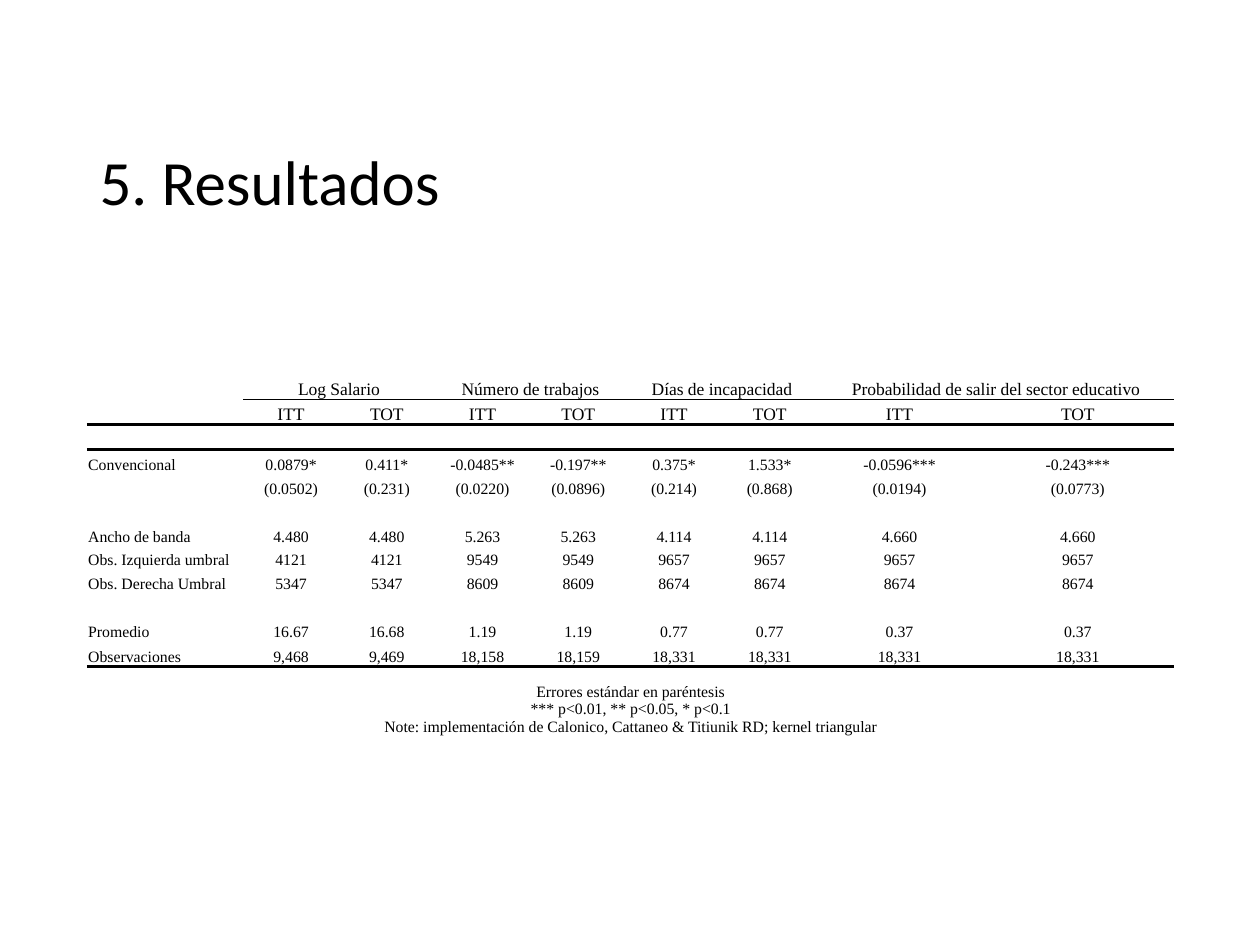
import lxml.etree
import pptx
import pptx.dml.color
import pptx.enum.text
import pptx.oxml.ns
import pptx.util

Inches = pptx.util.Inches
Pt = pptx.util.Pt
qn = pptx.oxml.ns.qn
PP_ALIGN = pptx.enum.text.PP_ALIGN
ANCHOR = pptx.enum.text.MSO_ANCHOR

BLACK = "000000"
NO_STYLE_NO_GRID = "{2D5ABB26-0587-4C30-8999-92F81FD0307C}"
TITLE = "5. Resultados"
OUTCOMES = [
    "Log Salario",
    "Número de trabajos",
    "Días de incapacidad",
    "Probabilidad de salir del sector educativo",
]
ESTIMATORS = ["ITT", "TOT"]
RESULTS = [
    [],
    ["Convencional", "0.0879*", "0.411*", "-0.0485**", "-0.197**",
     "0.375*", "1.533*", "-0.0596***", "-0.243***"],
    ["", "(0.0502)", "(0.231)", "(0.0220)", "(0.0896)",
     "(0.214)", "(0.868)", "(0.0194)", "(0.0773)"],
    [],
    ["Ancho de banda", "4.480", "4.480", "5.263", "5.263",
     "4.114", "4.114", "4.660", "4.660"],
    ["Obs. Izquierda umbral", "4121", "4121", "9549", "9549",
     "9657", "9657", "9657", "9657"],
    ["Obs. Derecha Umbral", "5347", "5347", "8609", "8609",
     "8674", "8674", "8674", "8674"],
    [],
    ["Promedio", "16.67", "16.68", "1.19", "1.19",
     "0.77", "0.77", "0.37", "0.37"],
    ["Observaciones", "9,468", "9,469", "18,158", "18,159",
     "18,331", "18,331", "18,331", "18,331"],
]
NOTES = [
    "Errores estándar en paréntesis",
    "*** p<0.01, ** p<0.05, * p<0.1",
    "Note: implementación de Calonico, Cattaneo & Titiunik RD; kernel triangular",
]
COLUMN_WIDTHS = [1.24] + [0.76] * 6 + [1.3, 1.53]
ROW_HEIGHTS = [0.19, 0.2, 0.2] + [0.19] * 8 + [0.2, 0.55]
HEADER_ROWS = 2
RULES = {0: 0.5, 1: 2, 11: 2}


def color(hex_code):
    return pptx.dml.color.RGBColor.from_string(hex_code)


def style_font(font, name, size):
    font.name = name
    font.size = Pt(size)
    font.color.rgb = color(BLACK)


def add_border(cell, side, width):
    properties = cell._tc.get_or_add_tcPr()
    line = lxml.etree.SubElement(properties, qn(f"a:ln{side}"), w=str(Pt(width)))
    fill = lxml.etree.SubElement(line, qn("a:solidFill"))
    lxml.etree.SubElement(fill, qn("a:srgbClr"), val=BLACK)


def fill_cell(cell, text, size, align):
    cell.margin_left = cell.margin_right = cell.margin_top = Inches(0.01)
    cell.margin_bottom = 0
    cell.vertical_anchor = ANCHOR.BOTTOM
    cell.fill.background()
    cell.text_frame.text = text
    paragraph = cell.text_frame.paragraphs[0]
    paragraph.alignment = align
    for run in paragraph.runs:
        style_font(run.font, "Times New Roman", size)
    if not text:
        lxml.etree.SubElement(paragraph._p, qn("a:endParaRPr"), sz=str(size * 100))


def add_title(slide):
    title = slide.shapes.title
    title.left, title.top = Inches(0.69), Inches(1.09)
    title.width, title.height = Inches(8.62), Inches(0.76)
    frame = title.text_frame
    frame.text = TITLE
    frame.vertical_anchor = ANCHOR.MIDDLE
    frame.auto_size = pptx.enum.text.MSO_AUTO_SIZE.NONE
    heading = frame.paragraphs[0]
    heading.alignment = PP_ALIGN.LEFT
    heading.line_spacing = 0.9
    style_font(heading.runs[0].font, "Calibri", 36)


def add_results(slide):
    outcome_row = [""] + [text for outcome in OUTCOMES for text in (outcome, "")]
    estimator_row = [""] + ESTIMATORS * len(OUTCOMES)
    rows = [outcome_row, estimator_row] + RESULTS + [["\v".join(NOTES)]]
    column_count = len(COLUMN_WIDTHS)
    table = slide.shapes.add_table(
        len(rows), column_count, Inches(0.69), Inches(2.98),
        Inches(sum(COLUMN_WIDTHS)), Inches(sum(ROW_HEIGHTS))).table
    table.first_row = table.horz_banding = False
    table._tbl.tblPr.find(qn("a:tableStyleId")).text = NO_STYLE_NO_GRID
    for column, width in zip(table.columns, COLUMN_WIDTHS):
        column.width = Inches(width)
    for row, height in zip(table.rows, ROW_HEIGHTS):
        row.height = Inches(height)

    last = len(rows) - 1
    for r, texts in enumerate(rows):
        for c in range(column_count):
            cell = table.cell(r, c)
            for side, rule_row in (("T", r - 1), ("B", r)):
                if rule_row in RULES and (rule_row, c) != (0, 0):
                    add_border(cell, side, RULES[rule_row])
            text = texts[c] if c < len(texts) else ""
            size = 10 if r < HEADER_ROWS else 9
            align = PP_ALIGN.LEFT if c == 0 and r != last else PP_ALIGN.CENTER
            fill_cell(cell, text, size, align)

    add_border_first = table.cell(0, 0)
    add_border_first.merge(table.cell(1, 0))
    for c in range(1, column_count, len(ESTIMATORS)):
        table.cell(0, c).merge(table.cell(0, c + 1))
    table.cell(last, 0).merge(table.cell(last, column_count - 1))


def main():
    deck = pptx.Presentation()
    deck.slide_width, deck.slide_height = Inches(10), Inches(7.5)
    slide = deck.slides.add_slide(deck.slide_layouts[5])
    add_title(slide)
    add_results(slide)
    deck.save("out.pptx")


if __name__ == "__main__":
    main()
